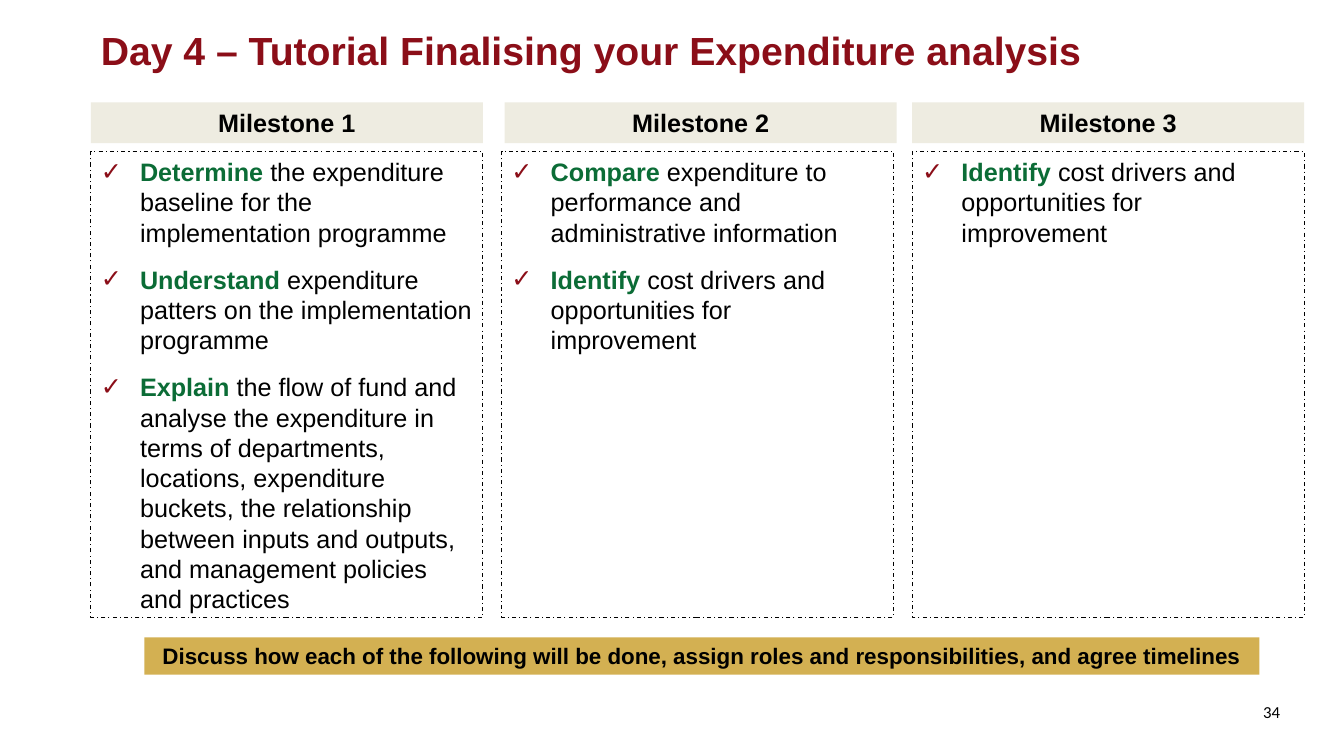
from lxml import etree
from pptx import Presentation
from pptx import util as u
from pptx.dml.color import RGBColor
from pptx.enum import dml, shapes, text
from pptx.oxml.ns import qn

MAROON, GREEN, BLACK = "8B0E18", "0B6C36", "000000"
CREAM, GOLD = "EEECE1", "D3B052"

COLUMN_LEFT, COLUMN_PITCH, COLUMN_WIDTH = 2.29, 10.35, 9.88
HEADER_NUDGE = 0.08  # the middle header sits slightly right of its column

DRIVERS = ("Identify", " cost drivers and opportunities for improvement")
MILESTONES = [
    [
        ("Determine ", "the expenditure baseline for the implementation programme"),
        ("Understand ", "expenditure patters on the implementation programme"),
        ("Explain ", "the flow of fund and analyse the expenditure in terms of "
                     "departments, locations, expenditure buckets, the relationship "
                     "between inputs and outputs, and management policies and practices"),
    ],
    [
        ("Compare", " expenditure to performance and administrative information"),
        DRIVERS,
    ],
    [DRIVERS],
]


def colour(value):
    return RGBColor.from_string(value)


def add_span(para, words, size, ink=BLACK, bold=False, face="Arial"):
    span = para.add_run()
    span.text = words
    span.font.name = face
    span.font.size = u.Pt(size)
    span.font.bold = bold
    span.font.color.rgb = colour(ink)


def add_label(page, place, words, size, align, ink=BLACK, bold=True,
              face="Arial", fill=None, anchor=text.MSO_ANCHOR.TOP):
    """One line of text, with a filled background if asked for."""
    box = page.shapes.add_textbox(*map(u.Cm, place))
    if fill:
        box.fill.solid()
        box.fill.fore_color.rgb = colour(fill)
    box.text_frame.word_wrap = True
    box.text_frame.vertical_anchor = anchor
    para = box.text_frame.paragraphs[0]
    para.alignment = align
    add_span(para, words, size, ink, bold, face)


def add_tick(para):
    """Hanging indent with a maroon tick as bullet."""
    props = para._p.get_or_add_pPr()
    props.set("marL", str(u.Cm(0.99)))
    props.set("indent", str(-u.Cm(0.99)))
    shade = etree.SubElement(props, qn("a:buClr"))
    etree.SubElement(shade, qn("a:srgbClr"), val=MAROON)
    etree.SubElement(props, qn("a:buFont"), typeface="Arial")
    etree.SubElement(props, qn("a:buChar"), char="✓")


def add_checklist(page, place, tasks):
    """Dash-dot frame holding ticked tasks with a green leading verb."""
    box = page.shapes.add_shape(shapes.MSO_SHAPE.RECTANGLE, *map(u.Cm, place))
    box.shadow.inherit = False
    box.fill.background()
    box.line.color.rgb = colour(BLACK)
    box.line.width = u.Pt(0.75)
    box.line.dash_style = dml.MSO_LINE.DASH_DOT
    frame = box.text_frame
    frame.word_wrap = True
    frame.vertical_anchor = text.MSO_ANCHOR.TOP
    for index, (verb, rest) in enumerate(tasks):
        para = frame.add_paragraph() if index else frame.paragraphs[0]
        add_tick(para)
        para.alignment = text.PP_ALIGN.LEFT
        para.space_before = u.Pt(6 if index else 0)
        para.space_after = u.Pt(6)
        add_span(para, verb, 18, GREEN, True)
        add_span(para, rest, 18)


def main():
    deck = Presentation()
    deck.slide_width, deck.slide_height = u.Cm(33.87), u.Cm(19.05)
    page = deck.slides.add_slide(deck.slide_layouts[6])
    align = text.PP_ALIGN

    # Title
    add_label(page, (2.29, 0.69, 29.24, 1.14),
              "Day 4 – Tutorial Finalising your Expenditure analysis",
              28, align.LEFT, MAROON, anchor=text.MSO_ANCHOR.MIDDLE)

    # Milestone columns
    for index, tasks in enumerate(MILESTONES):
        left = COLUMN_LEFT + index * COLUMN_PITCH
        header_left = left + (HEADER_NUDGE if index == 1 else 0)
        add_label(page, (header_left, 2.58, COLUMN_WIDTH, 1.03),
                  f"Milestone {index + 1}", 18, align.CENTER, fill=CREAM)
        add_checklist(page, (left, 3.82, COLUMN_WIDTH, 11.74), tasks)

    # Instruction bar and page number
    add_label(page, (3.64, 16.06, 28.1, 0.94),
              "Discuss how each of the following will be done, assign roles and "
              "responsibilities, and agree timelines", 16, align.CENTER, fill=GOLD)
    add_label(page, (30.58, 17.55, 1.93, 0.99), "34", 12, align.RIGHT,
              bold=False, face="Calibri")

    deck.save("out.pptx")


if __name__ == "__main__":
    main()
